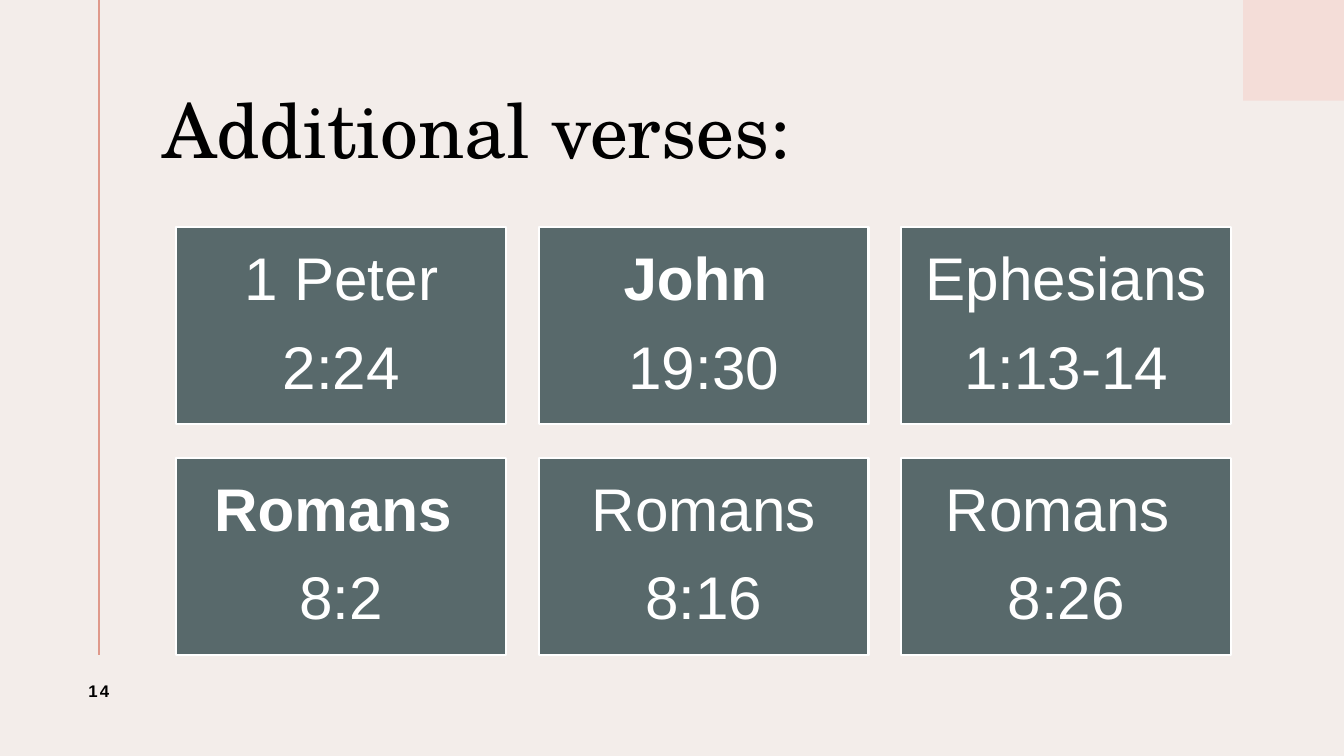
"""Build the slide of additional Bible verses."""
from dataclasses import dataclass

from lxml import etree
from pptx import Presentation
from pptx.dml.color import RGBColor
from pptx.enum import shapes, text
from pptx.oxml import ns
from pptx.util import Inches, Pt

PAPER, BLUSH, ROSE = "F3EDEA", "F4DDD8", "DF998B"
SLATE, WHITE, BLACK = "58696B", "FFFFFF", "000000"

CARD_LEFT, CARD_TOP = 1.75, 2.25
CARD_WIDTH, CARD_HEIGHT = 3.27, 1.96
COLUMN_STEP, ROW_STEP, COLUMNS = 3.595, 2.29, 3

TITLE_FONT = {"name": "TeX Gyre Schola", "size": Pt(54), "bold": False}
NUMBER_FONT = {"name": "Arial", "size": Pt(12), "bold": True}
CARD_FONT = {"name": "Arial", "size": Pt(43), "bold": False}
TITLE_PARA = {"alignment": text.PP_ALIGN.LEFT, "line_spacing": 0.9}
NUMBER_PARA = {"alignment": text.PP_ALIGN.CENTER, "space_after": Pt(6)}
CARD_PARA = {"alignment": text.PP_ALIGN.CENTER, "line_spacing": 0.9,
             "space_after": Pt(16.5)}


@dataclass(frozen=True)
class Verse:
    """A book and its chapter and verse."""
    book: str
    place: str
    bold: bool = False


VERSES = [
    Verse("1 Peter", "2:24"),
    Verse("John ", "19:30", bold=True),
    Verse("Ephesians", "1:13-14"),
    Verse("Romans ", "8:2", bold=True),
    Verse("Romans", "8:16"),
    Verse("Romans ", "8:26"),
]


def apply(target, values: dict) -> None:
    """Set each named attribute on the target."""
    for name, value in values.items():
        setattr(target, name, value)


def paint(color_format, color: str) -> None:
    """Give a colour or a fill its hex colour."""
    if hasattr(color_format, "solid"):
        color_format.solid()
        color_format = color_format.fore_color
    color_format.rgb = RGBColor.from_string(color)


def set_frame(box, margins: tuple[float, float, float, float]) -> None:
    """Wrap and centre the text of a box within its margins."""
    sides = ("margin_left", "margin_top", "margin_right", "margin_bottom")
    apply(box.text_frame, {
        "word_wrap": True,
        "auto_size": text.MSO_AUTO_SIZE.NONE,
        "vertical_anchor": text.MSO_ANCHOR.MIDDLE,
        **{side: Inches(margin) for side, margin in zip(sides, margins)},
    })


def write(para, words: str, para_format: dict, font: dict, color: str):
    """Write one formatted run in a paragraph and return it."""
    apply(para, para_format)
    span = para.add_run()
    span.text = words
    apply(span.font, font)
    paint(span.font.color, color)
    return span


def add_box(page, left: float, top: float, width: float, height: float, fill: str):
    """Add a plain filled rectangle without an outline."""
    box = page.shapes.add_shape(
        shapes.MSO_SHAPE.RECTANGLE, *map(Inches, (left, top, width, height)))
    box.shadow.inherit = False
    paint(box.fill, fill)
    box.line.fill.background()
    return box


def add_rule(page) -> None:
    """Add the vertical rule at the left."""
    rule = page.shapes.add_connector(
        shapes.MSO_CONNECTOR.STRAIGHT, *map(Inches, (0.98, 0, 0.98, 6.5)))
    paint(rule.line.fill, ROSE)
    rule.line.width = Pt(1.5)
    etree.SubElement(rule._element.spPr, ns.qn("a:effectLst"))


def add_title(page) -> None:
    """Place and fill the title."""
    title = page.shapes.title
    apply(title, {"left": Inches(1.61), "top": Inches(0.55),
                  "width": Inches(10.73), "height": Inches(1.56)})
    set_frame(title, (0, 0.05, 0.1, 0.05))
    write(title.text_frame.paragraphs[0], "Additional verses:",
          TITLE_PARA, TITLE_FONT, BLACK)


def add_number(page) -> None:
    """Add the slide number."""
    box = page.shapes.add_textbox(*map(Inches, (0.45, 6.5, 1.06, 0.71)))
    set_frame(box, (0.1, 0.05, 0.1, 0.05))
    span = write(box.text_frame.paragraphs[0], "14", NUMBER_PARA, NUMBER_FONT, BLACK)
    span._r.get_or_add_rPr().set("spc", "150")


def add_card(page, index: int, verse: Verse) -> None:
    """Add the card of a verse at its place in the grid."""
    row, column = divmod(index, COLUMNS)
    card = add_box(page, CARD_LEFT + column * COLUMN_STEP, CARD_TOP + row * ROW_STEP,
                   CARD_WIDTH, CARD_HEIGHT, SLATE)
    paint(card.line.fill, WHITE)
    card.line.width = Pt(1.5)
    set_frame(card, (0.18,) * 4)
    frame = card.text_frame
    write(frame.paragraphs[0], verse.book, CARD_PARA,
          {**CARD_FONT, "bold": verse.bold}, WHITE)
    write(frame.add_paragraph(), verse.place, CARD_PARA, CARD_FONT, WHITE)


def main() -> None:
    """Build and save the deck."""
    deck = Presentation()
    apply(deck, {"slide_width": Inches(13.33), "slide_height": Inches(7.5)})
    page = deck.slides.add_slide(deck.slide_layouts.get_by_name("Title Only"))
    paint(page.background.fill, PAPER)
    add_box(page, 12.33, 0, 1, 1, BLUSH)
    add_rule(page)
    add_title(page)
    add_number(page)
    for index, verse in enumerate(VERSES):
        add_card(page, index, verse)
    deck.save("out.pptx")


if __name__ == "__main__":
    main()
